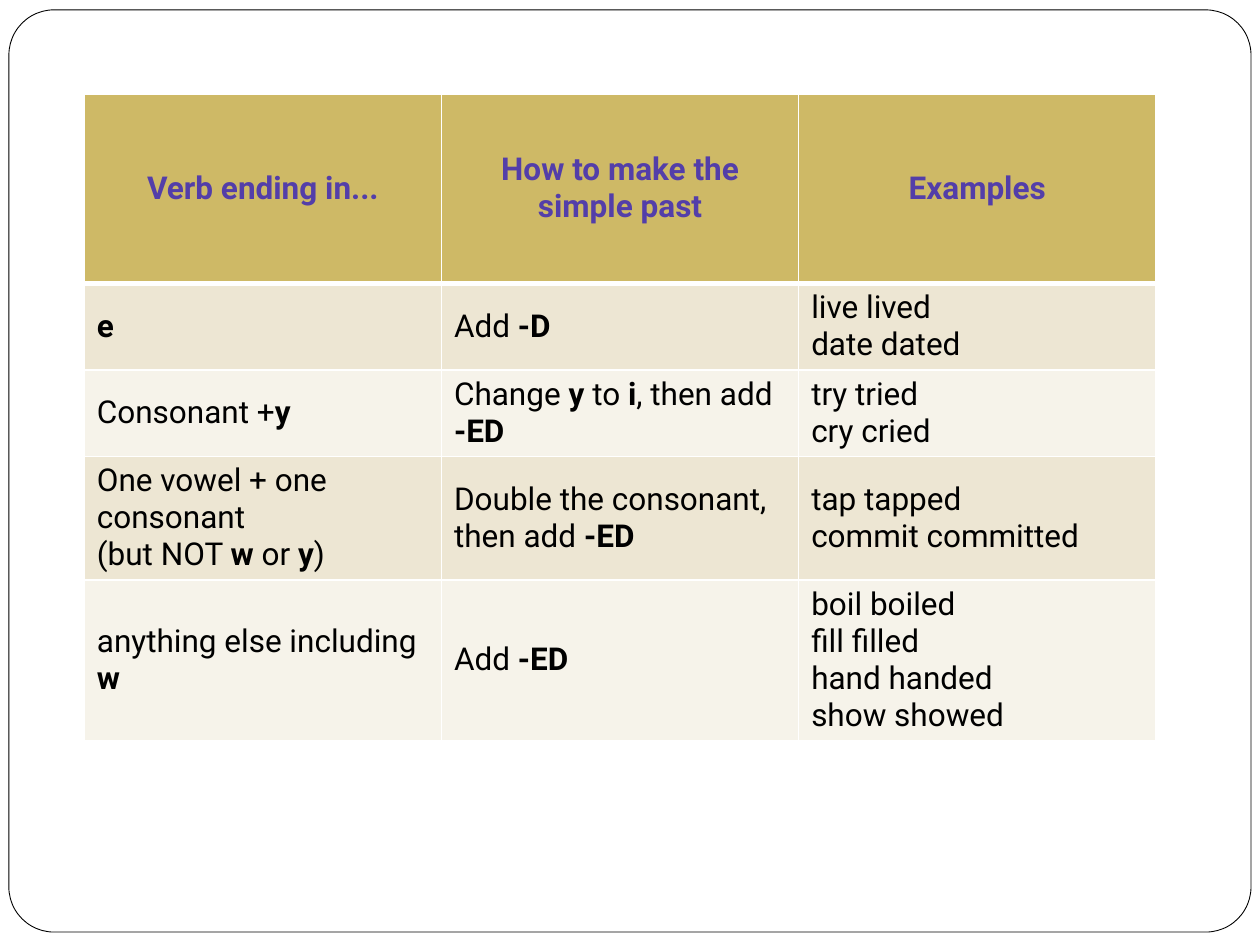
from collections import namedtuple
from dataclasses import dataclass

from lxml import etree
from pptx import Presentation
from pptx import util as u
from pptx.dml.color import RGBColor
from pptx.enum import shapes, text
from pptx.oxml import ns

Box = namedtuple("Box", "left top width height")


@dataclass(frozen=True)
class Theme:
    font: str = "Roboto"
    size: int = 18
    paper: str = "FFFFFF"
    ink: str = "000000"
    heading: str = "533EA9"
    header_fill: str = "CEB966"
    bands: tuple = ("EDE6D3", "F6F3EA")
    grid_width: float = 1
    header_rule: float = 3
    frame_width: float = 0.5


THEME = Theme()

HEADERS = ("Verb ending in...", "How to make the simple past", "Examples")

# Text between double asterisks is bold
RULES = (
    ("**e**", "Add **-D**", "live lived\ndate dated"),
    ("Consonant +**y**", "Change **y** to **i**, then add **-ED**",
     "try tried\ncry cried"),
    ("One vowel + one consonant\n(but NOT **w** or **y**)",
     "Double the consonant, then add **-ED**",
     "tap tapped\ncommit committed"),
    ("anything else including **w**", "Add **-ED**",
     "boil boiled\nfill filled\nhand handed\nshow showed"),
)


def color(value):
    return RGBColor.from_string(value)


def add_frame(page, box):
    """Rounded page border."""
    frame = page.shapes.add_shape(shapes.MSO_SHAPE.ROUNDED_RECTANGLE, *box)
    frame.adjustments[0] = 0.049
    frame.shadow.inherit = False
    frame.fill.solid()
    frame.fill.fore_color.rgb = color(THEME.paper)
    frame.line.color.rgb = color(THEME.ink)
    frame.line.width = u.Pt(THEME.frame_width)


def set_borders(cell, widths):
    """Draw the cell edges; widths maps L, R, T, B to points."""
    properties = cell._tc.get_or_add_tcPr()
    for side, width in widths.items():
        line = etree.SubElement(properties, ns.qn(f"a:ln{side}"),
                                w=str(int(u.Pt(width))))
        fill = etree.SubElement(line, ns.qn("a:solidFill"))
        etree.SubElement(fill, ns.qn("a:srgbClr"), val=THEME.paper)


def write_text(para, content, ink):
    """Write marked text, with line breaks and bold spans."""
    for index, piece in enumerate(content.split("**")):
        for line_index, line in enumerate(piece.split("\n")):
            if line_index:
                para.add_line_break()
            if not line:
                continue
            span = para.add_run()
            span.text = line
            formats = {"name": THEME.font, "size": u.Pt(THEME.size),
                       "bold": index % 2 == 1}
            for name, value in formats.items():
                setattr(span.font, name, value)
            span.font.color.rgb = color(ink)


def fill_cell(cell, content, row):
    is_header = row == 0
    rule, grid = THEME.header_rule, THEME.grid_width
    set_borders(cell, {"L": grid, "R": grid,
                       "T": rule if row == 1 else grid,
                       "B": rule if is_header else grid})
    cell.fill.solid()
    cell.fill.fore_color.rgb = color(
        THEME.header_fill if is_header else THEME.bands[(row - 1) % 2])
    cell.vertical_anchor = text.MSO_ANCHOR.MIDDLE
    para = cell.text_frame.paragraphs[0]
    para.alignment = text.PP_ALIGN.CENTER if is_header else text.PP_ALIGN.LEFT
    write_text(para, content, THEME.heading if is_header else THEME.ink)


def add_rules_table(page, box, header_height):
    """Spelling rules; body rows grow with their text."""
    rows = [tuple(f"**{title}**" for title in HEADERS), *RULES]
    table = page.shapes.add_table(len(rows), len(HEADERS), *box).table
    for column in table.columns:
        column.width = box.width // len(HEADERS)
    body_height = (box.height - header_height) // len(RULES)
    for index, contents in enumerate(rows):
        table.rows[index].height = body_height if index else header_height
        for column, content in enumerate(contents):
            fill_cell(table.cell(index, column), content, index)


def main():
    deck = Presentation()
    deck.slide_width, deck.slide_height = u.Cm(25.4), u.Cm(19.05)
    page = deck.slides.add_slide(deck.slide_layouts[6])
    add_frame(page, Box(u.Cm(0.18), u.Cm(0.2), u.Cm(25.04), u.Cm(18.59)))
    add_rules_table(page, Box(u.Cm(1.7), u.Cm(1.9), u.Cm(21.6), u.Cm(7.97)),
                    header_height=u.Cm(3.81))
    deck.save("out.pptx")


if __name__ == "__main__":
    main()
